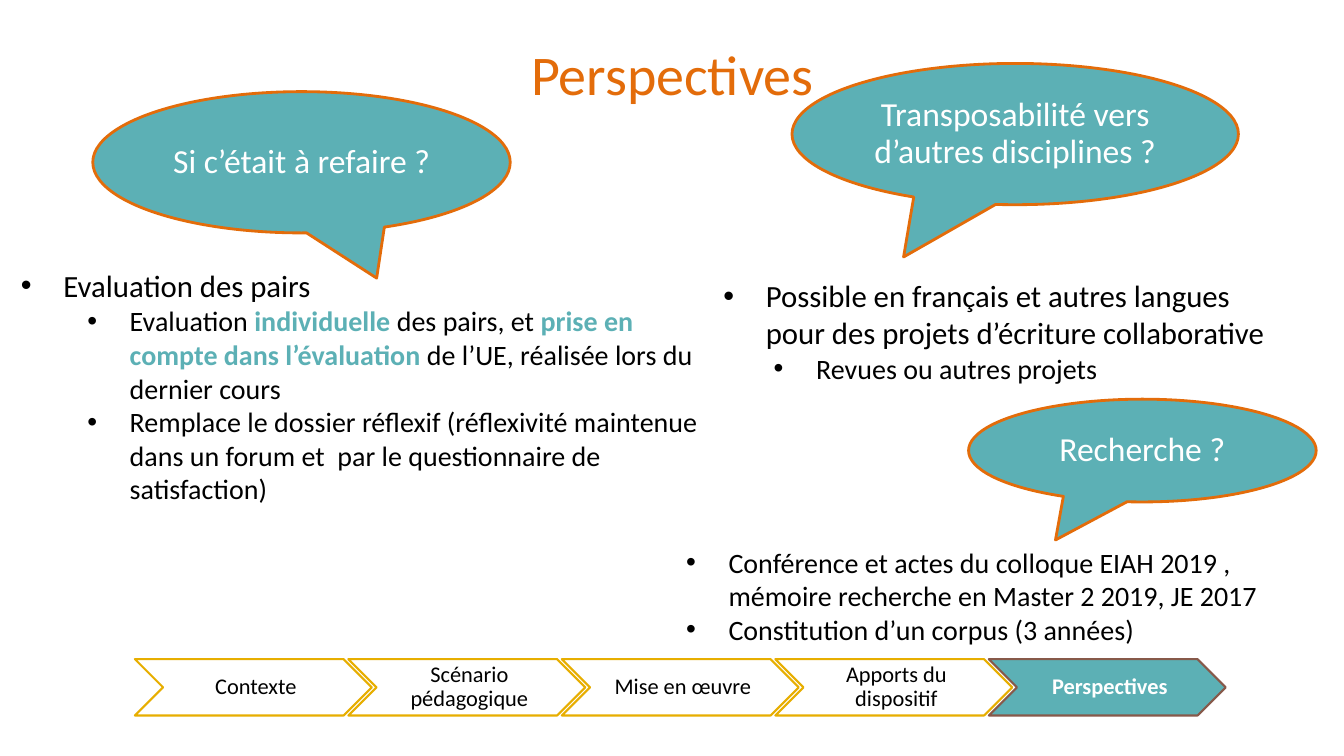
"""Build the "Perspectives" slide with its callouts, lists and step trail."""
from dataclasses import dataclass
from typing import Any

import pptx
import pptx.dml.color
import pptx.enum.shapes
import pptx.enum.text
import pptx.oxml
import pptx.shapes.autoshape
import pptx.slide
import pptx.text.text
import pptx.util

Cm = pptx.util.Cm
Pt = pptx.util.Pt
Kind = pptx.enum.shapes.MSO_SHAPE
Fit = pptx.enum.text.MSO_AUTO_SIZE
Shape = pptx.shapes.autoshape.Shape
Para = pptx.text.text._Paragraph
Slide = pptx.slide.Slide
Box = tuple[float, float, float, float]


@dataclass(frozen=True)
class Theme:
    font: str = "Calibri"
    teal: str = "5CB0B5"
    rust: str = "E36C0A"
    gold: str = "E7AE00"
    brown: str = "87594A"
    white: str = "FFFFFF"
    black: str = "000000"
    title: int = 40
    call: int = 24
    lead: int = 22
    body: int = 20
    step: int = 16


@dataclass(frozen=True)
class Call:
    text: str
    box: Box
    tip: tuple[float, float]


@dataclass(frozen=True)
class Phrase:
    text: str
    key: bool = False


@dataclass(frozen=True)
class Item:
    words: list[Phrase]
    size: int
    level: int = 0
    left: float = 1.07


@dataclass(frozen=True)
class Group:
    box: Box
    items: list[Item]


@dataclass(frozen=True)
class Step:
    text: str
    done: bool = False


LOOK = Theme()
HANG = 1.07
ROUND_PAD = {"margin_left": Cm(0.3), "margin_right": Cm(0.3),
             "margin_top": Cm(0.15), "margin_bottom": Cm(0.15)}
STEP_PAD = {"margin_left": Cm(0.18), "margin_right": Cm(0.05),
            "margin_top": Cm(0.05), "margin_bottom": Cm(0.05)}
MIDDLE = {"word_wrap": True, "auto_size": Fit.NONE,
          "vertical_anchor": pptx.enum.text.MSO_ANCHOR.MIDDLE}
CENTRE = {"alignment": pptx.enum.text.PP_ALIGN.CENTER, "line_spacing": 0.9}

CALLS = [
    Call("Si c’était à refaire ?", (2.34, 2.31, 10.52, 3.56), (0.18, 0.82)),
    Call("Transposabilité vers d’autres disciplines ?",
         (19.96, 1.6, 11.25, 3.56), (-0.25, 0.87)),
    Call("Recherche ?", (24.41, 10.06, 8.76, 2.59), (-0.25, 0.87)),
]
GROUPS = [
    Group((0.28, 6.6, 18.03, 6.4), [
        Item([Phrase("Evaluation des pairs")], LOOK.lead),
        Item([Phrase("Evaluation "), Phrase("individuelle", True),
              Phrase(" des pairs, et "),
              Phrase("prise en compte dans l’évaluation", True),
              Phrase(" de l’UE, réalisée lors du dernier cours")],
             LOOK.body, 1, 2.74),
        Item([Phrase("Remplace le dossier réflexif (réflexivité maintenue dans "
                     "un forum et  par le questionnaire de satisfaction)")],
             LOOK.body, 1, 2.74),
    ]),
    Group((17.98, 6.86, 14.88, 3), [
        Item([Phrase("Possible en français et autres langues pour des projets "
                     "d’écriture collaborative")], LOOK.lead),
        Item([Phrase("Revues ou autres projets")], LOOK.body, 1, 2.34),
    ]),
    Group((17.04, 13.61, 16.13, 2.82), [
        Item([Phrase("Conférence et actes du colloque EIAH 2019 , mémoire "
                     "recherche en Master 2 2019, JE 2017")], LOOK.body),
        Item([Phrase("Constitution d’un corpus (3 années)")], LOOK.body),
    ]),
]
STEPS = [Step("Contexte"), Step("Scénario pédagogique"), Step("Mise en œuvre"),
         Step("Apports du dispositif"), Step("Perspectives", True)]
STEP_BOX = (3.4, 16.61, 5.97, 1.42)
STEP_GAP = 5.38


def apply(thing: Any, form: dict[str, Any]) -> None:
    for name, value in form.items():
        setattr(thing, name, value)


def tint(code: str) -> pptx.dml.color.RGBColor:
    return pptx.dml.color.RGBColor.from_string(code)


def write(para: Para, text: str, size: int, hue: str, bold: bool = False) -> None:
    run = para.add_run()
    run.text = text
    apply(run.font, {"name": LOOK.font, "size": Pt(size), "bold": bold})
    run.font.color.rgb = tint(hue)


def label(shape: Shape, text: str, size: int, hue: str,
          pad: dict[str, Any], bold: bool = False) -> None:
    apply(shape.text_frame, MIDDLE | pad)
    para = shape.text_frame.paragraphs[0]
    apply(para, CENTRE)
    write(para, text, size, hue, bold)


def draw(slide: Slide, kind: Kind, box: Box, fill: str, edge: str,
         width: float) -> Shape:
    shape = slide.shapes.add_shape(kind, *map(Cm, box))
    shape.shadow.inherit = False
    shape.fill.solid()
    shape.fill.fore_color.rgb = tint(fill)
    shape.line.color.rgb = tint(edge)
    shape.line.width = Pt(width)
    return shape


def head(slide: Slide, text: str) -> None:
    title = slide.shapes.title
    apply(title, dict(zip(("left", "top", "width", "height"),
                          map(Cm, (2.34, 0.56, 29.21, 2.79)))))
    label(title, text, LOOK.title, LOOK.rust, {})


def call(slide: Slide, item: Call) -> None:
    shape = draw(slide, Kind.OVAL_CALLOUT, item.box, LOOK.teal, LOOK.rust, 2)
    for rank, value in enumerate(item.tip):
        shape.adjustments[rank] = value
    label(shape, item.text, LOOK.call, LOOK.white, ROUND_PAD)


def dot(para: Para, left: float) -> None:
    props = para._p.get_or_add_pPr()
    props.set("marL", str(Cm(left)))
    props.set("indent", str(-Cm(HANG)))
    for tag, name, value in (("buFont", "typeface", "Arial"),
                             ("buChar", "char", "•")):
        node = pptx.oxml.parse_xml(
            f'<a:{tag} xmlns:a="http://schemas.openxmlformats.org/'
            f'drawingml/2006/main" {name}="{value}"/>')
        props.append(node)


def fill_list(slide: Slide, group: Group) -> None:
    frame = slide.shapes.add_textbox(*map(Cm, group.box)).text_frame
    apply(frame, {"word_wrap": True, "auto_size": Fit.SHAPE_TO_FIT_TEXT})
    for rank, item in enumerate(group.items):
        para = frame.add_paragraph() if rank else frame.paragraphs[0]
        para.level = item.level
        dot(para, item.left)
        for phrase in item.words:
            hue = LOOK.teal if phrase.key else LOOK.black
            write(para, phrase.text, item.size, hue, phrase.key)


def trail(slide: Slide, steps: list[Step]) -> None:
    left, top, width, height = STEP_BOX
    for rank, step in enumerate(steps):
        fill, edge, hue = ((LOOK.teal, LOOK.brown, LOOK.white) if step.done
                           else (LOOK.white, LOOK.gold, LOOK.black))
        box = (left + rank * STEP_GAP, top, width, height)
        shape = draw(slide, Kind.CHEVRON, box, fill, edge, 1.5)
        label(shape, step.text, LOOK.step, hue, STEP_PAD, step.done)


def main() -> None:
    deck = pptx.Presentation()
    apply(deck, {"slide_width": Cm(33.87), "slide_height": Cm(19.05)})
    slide = deck.slides.add_slide(deck.slide_layouts.get_by_name("Title Only"))
    head(slide, "Perspectives")
    for item in CALLS:
        call(slide, item)
    for group in GROUPS:
        fill_list(slide, group)
    trail(slide, STEPS)
    deck.save("out.pptx")


if __name__ == "__main__":
    main()
